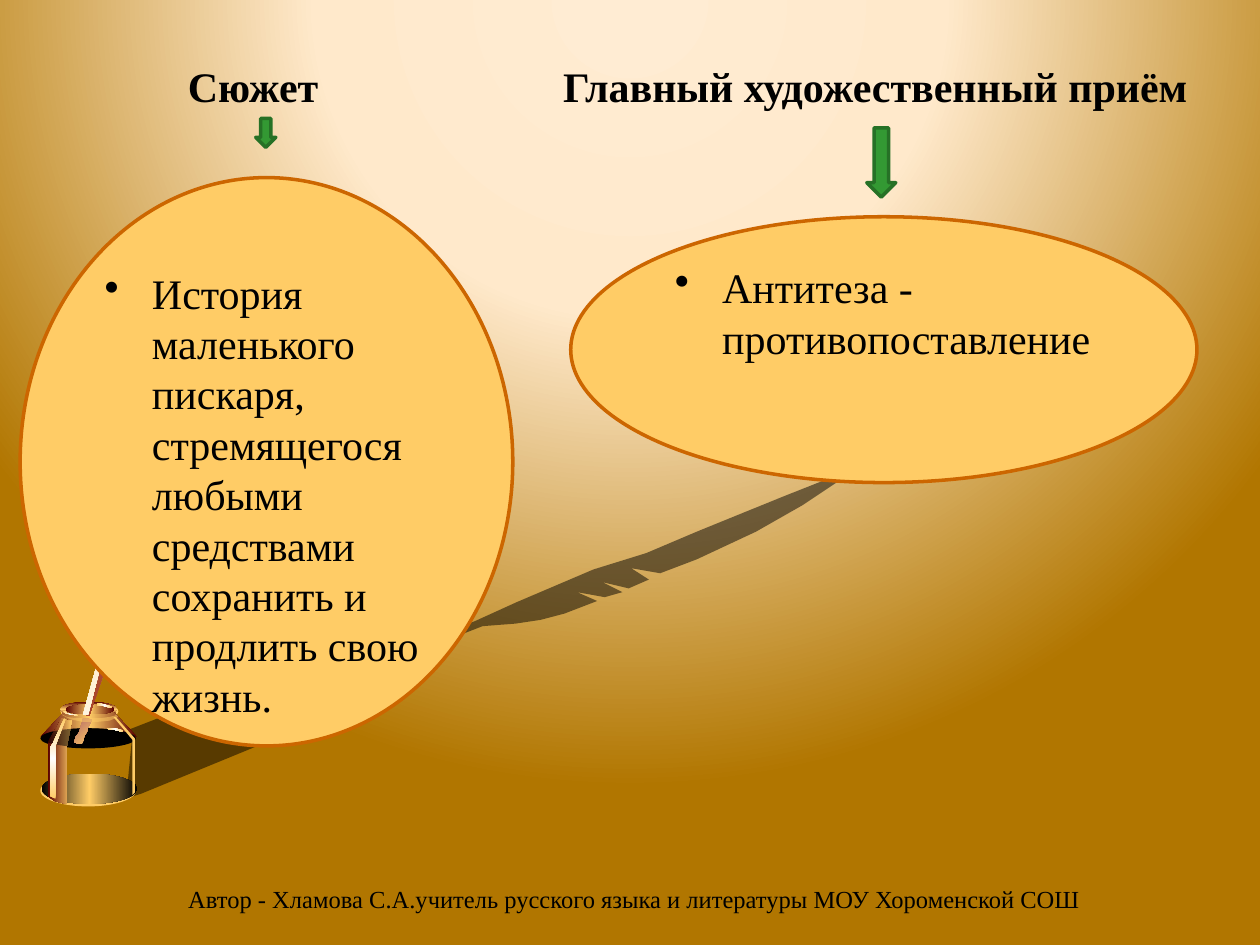
import copy

import pptx
import pptx.dml.color
import pptx.enum.shapes
import pptx.enum.text
import pptx.oxml.ns
import pptx.util

Pt = pptx.util.Pt
qn = pptx.oxml.ns.qn
SHAPES = pptx.enum.shapes.MSO_SHAPE
ANCHOR = pptx.enum.text.MSO_ANCHOR
ALIGN = pptx.enum.text.PP_ALIGN

BLACK, GOLD, WHITE, MAROON = "000000", "FFCC66", "FFFFFF", "590000"
BRONZE = [(0, MAROON), (50, GOLD), (100, MAROON)]
GLINT = [(0, GOLD), (50, WHITE), (100, GOLD)]
GLASS = [(0, BLACK), (50, GOLD), (100, BLACK)]

QUILL_SHADOW = [
    (99, 634), (112, 630), (229, 582), (281, 552), (293, 544), (301, 539), (301, 529),
    (383, 497), (396, 496), (409, 495), (429, 492), (448, 487), (474, 477), (458, 470),
    (480, 474), (494, 470), (478, 462), (499, 467), (515, 460), (501, 451), (524, 455),
    (553, 444), (600, 422), (637, 401), (685, 369), (622, 394), (585, 409), (553, 422),
    (513, 439), (471, 452), (410, 478), (377, 493), (296, 523), (289, 521), (271, 521),
    (177, 550), (100, 580), (103, 585), (105, 584), (100, 635)]
SHOULDER = [(32, 585), (51, 565), (90, 565), (109, 585)]
LEFT_SIDE = [(49, 570), (38, 589), (38, 632), (44, 636), (48, 637), (53, 638), (53, 593),
             (57, 572), (55, 572), (52, 571)]
LEFT_GLINT = [(40, 593), (40, 632), (44, 634), (44, 594), (44, 592), (45, 589), (52, 571),
              (51, 570), (42, 590)]
RIGHT_EDGE = [(107, 586), (107, 629), (105, 631), (105, 587), (90, 569), (92, 569)]
RIM_GLINT = [(77, 558), (82, 559), (86, 560), (89, 561), (88, 562), (85, 561), (81, 560),
             (77, 560)]
INK_GLINT = [(85, 578), (91, 578), (95, 579), (98, 580), (97, 581), (94, 580), (90, 579),
             (86, 579)]
NECK_GLINT = [(62, 568), (56, 567), (52, 566), (50, 565), (51, 564), (53, 566), (57, 567),
              (61, 567)]
QUILL_REFLECTION = [(66, 570), (73, 571), (70, 577), (69, 581), (67, 584), (66, 588),
                    (65, 590), (61, 590), (59, 589), (60, 585), (63, 581), (64, 577),
                    (65, 574)]
NECK_RING = [(49, 567), (53, 569), (60, 570), (70, 570), (80, 570), (87, 569), (91, 568),
             (92, 567), (94, 569), (87, 572), (77, 573), (66, 573), (56, 571), (50, 568)]
FEATHER = [
    (128, 342), (122, 359), (116, 381), (111, 403), (104, 432), (95, 465), (88, 496),
    (81, 519), (66, 567), (71, 568), (89, 515), (105, 497), (113, 481), (119, 469),
    (103, 468), (120, 466), (122, 461), (106, 459), (123, 459), (126, 450), (107, 450),
    (127, 446), (133, 415), (137, 386), (139, 365), (139, 351), (137, 342), (132, 331)]
QUILL_SHAFT = [(66, 567), (127, 346), (70, 567)]

SCENERY = [
    ("outline", QUILL_SHADOW, BLACK, {"alpha": 50}),
    ("oval", (32, 615, 76, 25), GOLD, {}),
    ("oval", (33, 614, 76, 24), GLASS, {}),
    ("oval", (48, 557, 46, 15), GOLD, {}),
    ("oval", (48, 557, 45, 12), BRONZE, {"angle": 90}),
    ("outline", SHOULDER, BRONZE, {}),
    ("oval", (32, 578, 76, 16), BLACK, {}),
    ("outline", LEFT_SIDE, [(0, MAROON), (100, GOLD)], {}),
    ("oval", (52, 559, 39, 8), BRONZE, {}),
    ("oval", (33, 578, 73, 15), BLACK, {"alpha": 50}),
    ("outline", LEFT_GLINT, GLINT, {"angle": 90}),
    ("outline", RIGHT_EDGE, GOLD, {}),
    ("outline", RIM_GLINT, GLINT, {}),
    ("outline", INK_GLINT, GLINT, {}),
    ("outline", NECK_GLINT, GLINT, {}),
    ("outline", QUILL_REFLECTION, [(0, "B36666"), (100, GOLD)], {"angle": 45}),
    ("outline", NECK_RING, GOLD, {"alpha": 50}),
    ("outline", FEATHER, [(0, GOLD), (100, "8D1919")], {"angle": 45}),
    ("outline", QUILL_SHAFT, [(0, GOLD), (100, WHITE)], {"angle": 45}),
]


def colour(value):
    """Return the colour for a hex string."""
    return pptx.dml.color.RGBColor.from_string(value)


def apply(target, formats):
    """Set each named format value on the target."""
    for name, value in formats.items():
        setattr(target, name, value)


def add_gradient(fill, owner, stops):
    """Give the fill these gradient stops and return its element."""
    fill.gradient()
    gradient = next(owner.iter(qn("a:gradFill")))
    stop_list = gradient.find(qn("a:gsLst"))
    for _ in stops[2:]:
        stop_list.append(copy.deepcopy(stop_list[0]))
    for stop, (percent, value) in zip(fill.gradient_stops, stops):
        stop.color.rgb = colour(value)
        stop.position = percent / 100
    return gradient


def paint(shape, fill, alpha=100, angle=0, border=None):
    """Fill a shape plainly or with a gradient, and set its border."""
    shape.shadow.inherit = False
    if isinstance(fill, list):
        add_gradient(shape.fill, shape._element.spPr, fill)
        shape.fill.gradient_angle = (360 - angle) % 360
    else:
        shape.fill.solid()
        shape.fill.fore_color.rgb = colour(fill)
        if alpha < 100:
            tint = next(shape._element.spPr.iter(qn("a:srgbClr")))
            tint.append(tint.makeelement(qn("a:alpha"), {"val": str(alpha * 1000)}))
    if border:
        shape.line.color.rgb = colour(border)
        shape.line.width = Pt(2)
    else:
        shape.line.fill.background()


def write(shape, text, frame_formats, paragraph_formats, font_formats):
    """Put one formatted paragraph in the shape and return it."""
    apply(shape.text_frame, frame_formats)
    paragraph = shape.text_frame.paragraphs[0]
    apply(paragraph, paragraph_formats)
    run = paragraph.add_run()
    run.text = text
    apply(run.font, {"name": "Times New Roman", **font_formats})
    run.font.color.rgb = colour(BLACK)
    return paragraph


def draw_background(slide):
    """Spread a round glow from the top of the slide."""
    stops = [(0, "FFECD3"), (40, "FFE9CB"), (100, "B17600")]
    gradient = add_gradient(slide.background.fill, slide._element, stops)
    gradient.remove(gradient.find(qn("a:lin")))
    glow = gradient.makeelement(qn("a:path"), {"path": "circle"})
    edges = {"l": "50000", "t": "-80000", "r": "50000", "b": "180000"}
    glow.append(glow.makeelement(qn("a:fillToRect"), edges))
    gradient.append(glow)


def draw_scenery(slide, left, top, width):
    """Draw the inkwell and quill on a grid of 1000 units across the box."""
    unit = width / 1000
    for kind, geometry, fill, look in SCENERY:
        if kind == "oval":
            x, y, w, h = (value * unit for value in geometry)
            part = slide.shapes.add_shape(SHAPES.OVAL, Pt(left + x), Pt(top + y), Pt(w), Pt(h))
        else:
            builder = slide.shapes.build_freeform(*geometry[0], scale=float(Pt(unit)))
            builder.add_line_segments(geometry[1:], close=True)
            part = builder.convert_to_shape(Pt(left), Pt(top))
        paint(part, fill, **look)


def draw_topic(slide, left, top, heading, heading_box, indent, answer, oval_box, arrow_box):
    """Draw a heading, an arrow and the oval with its answer."""
    def place(box):
        """Turn a box relative to the topic into slide lengths."""
        x, y, w, h = box
        return Pt(left + x), Pt(top + y), Pt(w), Pt(h)

    title = slide.shapes.add_textbox(*place(heading_box))
    write(title, heading,
          {"word_wrap": True, "vertical_anchor": ANCHOR.BOTTOM, "margin_left": Pt(7.2 + indent)},
          {}, {"size": Pt(24), "bold": True})

    oval = slide.shapes.add_shape(SHAPES.OVAL, *place(oval_box))
    paint(oval, GOLD, border="CC6600")
    paragraph = write(oval, answer, {"word_wrap": True, "vertical_anchor": ANCHOR.TOP},
                      {"alignment": ALIGN.LEFT, "space_before": Pt(2)}, {"size": Pt(24)})
    properties = paragraph._p.get_or_add_pPr()
    properties.set("marL", str(Pt(27)))
    properties.set("indent", str(Pt(-27)))
    properties.append(properties.makeelement(qn("a:buChar"), {"char": "•"}))

    arrow = slide.shapes.add_shape(SHAPES.DOWN_ARROW, *place(arrow_box))
    paint(arrow, "339933", border="267126")


def draw_footer(slide, left, top, width, height):
    """Write the author line centred in the box."""
    footer = slide.shapes.add_textbox(Pt(left), Pt(top), Pt(width), Pt(height))
    write(footer, "Автор - Хламова С.А.учитель русского языка и литературы МОУ Хороменской СОШ",
          {"word_wrap": True, "vertical_anchor": ANCHOR.MIDDLE},
          {"alignment": ALIGN.CENTER}, {"size": Pt(14)})


def main():
    """Build the slide and save it."""
    deck = pptx.Presentation()
    apply(deck, {"slide_width": Pt(720), "slide_height": Pt(540)})
    slide = deck.slides.add_slide(deck.slide_layouts[6])
    draw_background(slide)
    draw_scenery(slide, 0, 0, 720)
    draw_topic(slide, 11.52, 16.56, "Сюжет", (16.56, 0, 318.24, 50.4), 72,
               "История маленького пискаря, стремящегося любыми средствами "
               "сохранить и продлить свою жизнь.",
               (0, 84.96, 281.52, 324.72), (134.64, 51.12, 11.52, 16.56))
    draw_topic(slide, 314.64, 16.56, "Главный художественный приём", (0, 0, 382.32, 50.4), 0,
               "Антитеза - противопоставление",
               (11.52, 107.28, 357.84, 151.92), (180.72, 56.5, 16.56, 39.6))
    draw_footer(slide, 92.5, 495.36, 540, 36)
    deck.save("out.pptx")


if __name__ == "__main__":
    main()
